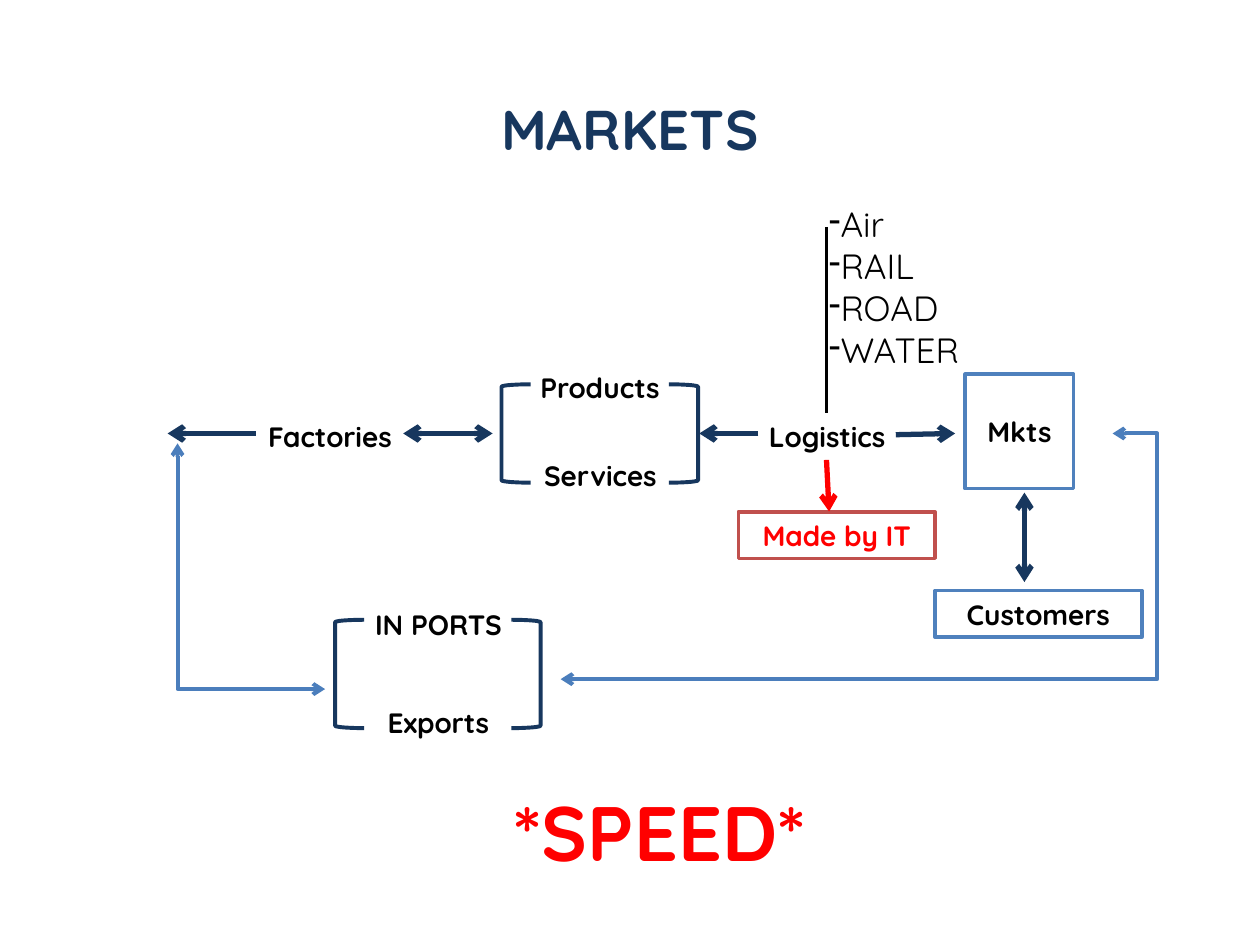
"""Build the markets and logistics flow diagram slide."""
import pptx
import pptx.dml.color
import pptx.enum.shapes
import pptx.enum.text
import pptx.oxml
import pptx.oxml.ns
import pptx.util

Pt = pptx.util.Pt
SHAPE = pptx.enum.shapes.MSO_SHAPE
LINK = pptx.enum.shapes.MSO_CONNECTOR
ALIGN = pptx.enum.text.PP_ALIGN
NAVY, BLUE, LINK_BLUE, BRICK = "17375E", "4F81BD", "4B7EBC", "C0504D"
RED, BLACK, WHITE = "FF0000", "000000", "FFFFFF"


def rgb(value):
    return pptx.dml.color.RGBColor.from_string(value)


def add_run(p, text, size, color, bold=True):
    r = p.add_run()
    r.text = text
    r.font.name = "Quicksand"
    r.font.size = Pt(size)
    r.font.bold = bold
    r.font.color.rgb = rgb(color)


prs = pptx.Presentation()
prs.slide_width, prs.slide_height = Pt(720), Pt(540)
s = prs.slides.add_slide(prs.slide_layouts[6])

tf = s.shapes.add_textbox(Pt(36), Pt(50.4), Pt(648), Pt(432)).text_frame
tf.word_wrap = True
p = tf.paragraphs[0]
p.alignment = ALIGN.CENTER
add_run(p, "MARKETS", 32, NAVY)

boxes = [
    ("Products", 286.6, 208.1, 112.5, 26.6, WHITE, BLACK, 16),
    ("Services", 292.3, 258.5, 101.5, 26.6, WHITE, BLACK, 16),
    ("Logistics", 421.9, 236.2, 101.5, 26.6, WHITE, BLACK, 16),
    ("Mkts", 551.5, 213.8, 62, 65.5, BLUE, BLACK, 16),
    ("Made by IT", 421.9, 292.5, 112.5, 26.6, BRICK, RED, 16),
    ("Factories", 123.8, 236.2, 129.6, 26.6, WHITE, BLACK, 16),
    ("IN PORTS", 185.8, 343.4, 129.6, 26.6, WHITE, BLACK, 16),
    ("Exports", 185.8, 399.6, 129.6, 26.6, WHITE, BLACK, 16),
    ("Customers", 534.2, 337.5, 118.3, 26.6, BLUE, BLACK, 16),
    ("*SPEED*", 213.8, 444.2, 326.2, 60.5, WHITE, RED, 44),
]
for text, x, y, w, h, border, color, size in boxes:
    sp = s.shapes.add_shape(SHAPE.RECTANGLE, Pt(x), Pt(y), Pt(w), Pt(h))
    sp.shadow.inherit = False
    sp.fill.solid()
    sp.fill.fore_color.rgb = rgb(WHITE)
    sp.line.color.rgb = rgb(border)
    sp.line.width = Pt(2)
    tf = sp.text_frame
    tf.word_wrap = True
    tf.vertical_anchor = pptx.enum.text.MSO_ANCHOR.MIDDLE
    p = tf.paragraphs[0]
    p.alignment = ALIGN.CENTER
    add_run(p, text, size, color)

tf = s.shapes.add_textbox(Pt(466.6), Pt(112.3), Pt(129.6), Pt(104.4)).text_frame
tf.word_wrap = True
for i, mode in enumerate(["Air", "RAIL", "ROAD", "WATER"]):
    p = tf.add_paragraph() if i else tf.paragraphs[0]
    pptx.oxml.ns.qn("a:buChar")
    bullet = p._p.get_or_add_pPr().makeelement(pptx.oxml.ns.qn("a:buChar"), {"char": "-"})
    p._p.get_or_add_pPr().append(bullet)
    add_run(p, mode, 20, BLACK, bold=False)

brackets = [(286.6, 382.3, 219.6, 56.2), (191.5, 292.3, 354.2, 61.9)]
for left, right, y, h in brackets:
    for x in (left, right):
        sp = s.shapes.add_shape(SHAPE.RIGHT_BRACKET, Pt(x), Pt(y), Pt(16.6), Pt(h))
        sp.shadow.inherit = False
        sp.fill.background()
        sp.line.color.rgb = rgb(NAVY)
        sp.line.width = Pt(2.25)
        if x == left:
            sp._element.spPr.xfrm.set("flipH", "1")

straight, bent = LINK.STRAIGHT, LINK.ELBOW
both, start, end = ("headEnd", "tailEnd"), ("headEnd",), ("tailEnd",)
links = [
    (straight, 472.3, 129.6, 472.3, 236.2, BLACK, 2.25, ()),
    (straight, 433.4, 247.7, 399.6, 247.7, NAVY, 3, end),
    (straight, 545.8, 247.7, 511.9, 248.4, NAVY, 3, start),
    (straight, 473.8, 292.3, 472.3, 262.8, RED, 3, start),
    (straight, 585.4, 332.6, 585.4, 281.5, NAVY, 3, both),
    (straight, 281.5, 247.7, 230.4, 247.7, NAVY, 3, both),
    (straight, 146.2, 247.7, 95.8, 247.7, NAVY, 3, end),
    (bent, 635.8, 247.7, 320.4, 388.1, LINK_BLUE, 2.25, both),
    (bent, 185.8, 393.8, 101.5, 253.4, LINK_BLUE, 2.25, both),
]
for kind, x1, y1, x2, y2, color, width, arrows in links:
    sp = s.shapes.add_connector(kind, Pt(x1), Pt(y1), Pt(x2), Pt(y2))
    sp.line.color.rgb = rgb(color)
    sp.line.width = Pt(width)
    ln = sp.line._get_or_add_ln()
    for tag in arrows:
        ln.append(ln.makeelement(pptx.oxml.ns.qn("a:" + tag), {"type": "arrow"}))
    spPr = sp._element.spPr
    spPr.append(spPr.makeelement(pptx.oxml.ns.qn("a:effectLst"), {}))
    if kind == bent:
        geom = spPr.find(pptx.oxml.ns.qn("a:prstGeom"))
        if y2 < y1:
            geom.set("prst", "bentConnector2")
        else:
            guides = geom.find(pptx.oxml.ns.qn("a:avLst"))
            guide = {"name": "adj1", "fmla": "val -8100"}
            guides.append(guides.makeelement(pptx.oxml.ns.qn("a:gd"), guide))

prs.save("out.pptx")
